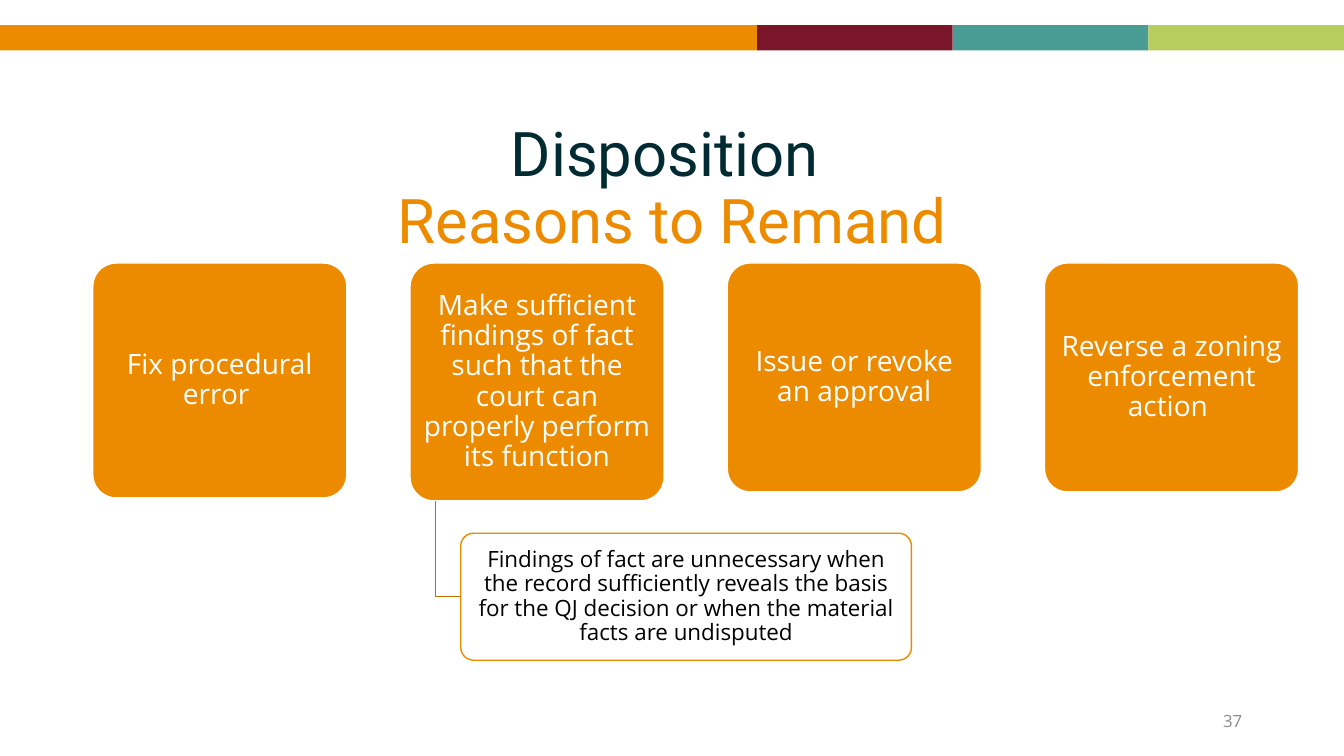
from dataclasses import dataclass

from lxml.etree import SubElement
from pptx import Presentation
from pptx.dml.color import RGBColor
from pptx.enum.shapes import MSO_SHAPE
from pptx.enum.text import MSO_ANCHOR, MSO_AUTO_SIZE, PP_ALIGN
from pptx.oxml.ns import qn
from pptx.util import Inches, Pt


@dataclass(frozen=True)
class Theme:
    orange: str = "ED8B00"
    maroon: str = "79162A"
    teal: str = "499C94"
    lime: str = "B8CD5E"
    ink: str = "012B32"
    brown: str = "BE6F00"
    gray: str = "8C8C8C"
    white: str = "FFFFFF"
    black: str = "000000"
    heading_font: str = "Roboto"
    body_font: str = "Open Sans"
    title_size: int = 44
    card_size: int = 20
    note_size: int = 16
    number_size: int = 12


THEME = Theme()

BANDS = [(7.51, THEME.orange), (1.94, THEME.maroon),
         (1.94, THEME.teal), (1.94, THEME.lime)]

# Reason text and card height
REASONS = [
    ("Fix procedural error ", 2.33),
    ("Make sufficient findings of fact such that the court can "
     "properly perform its function", 2.36),
    ("Issue or revoke an approval", 2.27),
    ("Reverse a zoning enforcement action ", 2.27),
]
CARD_LEFT, CARD_TOP, CARD_WIDTH = 0.92, 2.61, 2.52
CARD_PITCH = 9.44 / 3

NOTE = ("Findings of fact are unnecessary when the record sufficiently reveals "
        "the basis for the QJ decision or when the material facts are undisputed")
NOTE_LEFT, NOTE_TOP, NOTE_WIDTH, NOTE_HEIGHT = 4.57, 5.29, 4.47, 1.26


def rgb(color):
    return RGBColor.from_string(color)


def style(font, name, size, color):
    font.name = name
    font.size = Pt(size)
    font.color.rgb = rgb(color)


def write(frame, text, size, color, align=PP_ALIGN.CENTER):
    frame.word_wrap = True
    frame.vertical_anchor = MSO_ANCHOR.MIDDLE
    para = frame.paragraphs[0]
    para.text = text
    para.alignment = align
    style(para.font, THEME.body_font, size, color)
    return para


def add_block(page, kind, left, top, width, height, fill):
    block = page.shapes.add_shape(kind, Inches(left), Inches(top),
                                  Inches(width), Inches(height))
    block.shadow.inherit = False
    block.fill.solid()
    block.fill.fore_color.rgb = rgb(fill)
    block.line.fill.background()
    return block


def add_bands(page):
    left = 0
    for width, color in BANDS:
        add_block(page, MSO_SHAPE.RECTANGLE, left, 0.25, width, 0.25, color)
        left += width


def add_title(page):
    title = page.shapes.title
    title.left, title.top = Inches(0.92), Inches(1.16)
    title.width, title.height = Inches(11.5), Inches(1.45)
    frame = title.text_frame
    frame.auto_size = MSO_AUTO_SIZE.NONE
    frame.vertical_anchor = MSO_ANCHOR.MIDDLE
    para = frame.paragraphs[0]
    para.alignment = PP_ALIGN.CENTER
    para.line_spacing = 0.9
    first = para.add_run()
    first.text = "Disposition "
    para.add_line_break()
    second = para.add_run()
    second.text = "Reasons to Remand"
    for span, color in ((first, THEME.ink), (second, THEME.orange)):
        style(span.font, THEME.heading_font, THEME.title_size, color)


def add_card(page, text, left, top, width, height, fill, line, size, color):
    card = add_block(page, MSO_SHAPE.ROUNDED_RECTANGLE,
                     left, top, width, height, fill)
    card.adjustments[0] = 0.1
    card.line.color.rgb = rgb(line)
    card.line.width = Pt(1)
    frame = card.text_frame
    frame.margin_left = frame.margin_right = Inches(0.04)
    frame.margin_top = frame.margin_bottom = Inches(0.03)
    write(frame, text, size, color).line_spacing = 0.9
    return card


def add_elbow(page, left, top, right, bottom):
    builder = page.shapes.build_freeform(Inches(left), Inches(top))
    builder.add_line_segments([(Inches(left), Inches(bottom)),
                               (Inches(right), Inches(bottom))], close=False)
    elbow = builder.convert_to_shape()
    elbow.shadow.inherit = False
    elbow.fill.background()
    elbow.line.color.rgb = rgb(THEME.brown)
    elbow.line.width = Pt(1)


def set_opacity(shape, percent):
    color = shape.fill._xPr.find(qn("a:solidFill"))[0]
    SubElement(color, qn("a:alpha")).set("val", str(percent * 1000))


def add_page_number(page, number):
    box = page.shapes.add_textbox(Inches(9.42), Inches(6.95),
                                  Inches(3), Inches(0.4))
    write(box.text_frame, number, THEME.number_size, THEME.gray, PP_ALIGN.RIGHT)


def main():
    deck = Presentation()
    deck.slide_width, deck.slide_height = Inches(13.33), Inches(7.5)
    page = deck.slides.add_slide(deck.slide_layouts[5])

    # Header
    add_bands(page)
    add_title(page)

    # Reasons
    for index, (text, height) in enumerate(REASONS):
        add_card(page, text, CARD_LEFT + index * CARD_PITCH, CARD_TOP,
                 CARD_WIDTH, height, THEME.orange, THEME.white,
                 THEME.card_size, THEME.white)

    # Note hanging from the second reason
    add_elbow(page, 4.32, CARD_TOP + REASONS[1][1],
              NOTE_LEFT, NOTE_TOP + NOTE_HEIGHT / 2)
    note = add_card(page, NOTE, NOTE_LEFT, NOTE_TOP, NOTE_WIDTH, NOTE_HEIGHT,
                    THEME.white, THEME.orange, THEME.note_size, THEME.black)
    set_opacity(note, 90)

    # Footer
    add_page_number(page, "37")
    deck.save("out.pptx")


if __name__ == "__main__":
    main()
